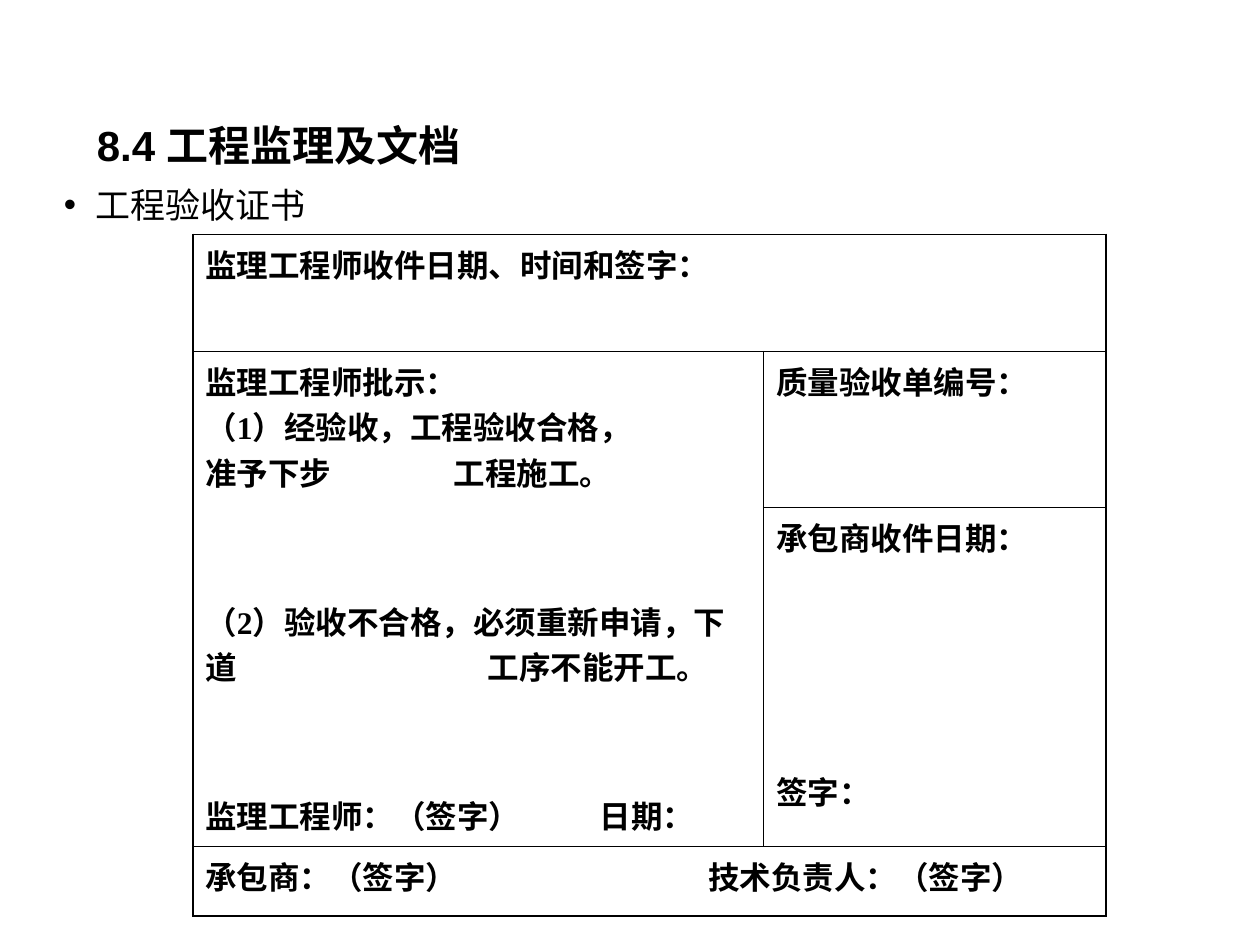
from lxml import etree
from pptx import Presentation, util as u
from pptx.dml.color import RGBColor
from pptx.enum import text
from pptx.oxml.ns import qn

# Content: a cell line is (text, space before in points, tab stop in inches)
HEADING = "8.4 工程监理及文档"
TOPIC = "工程验收证书"
COLUMNS = [4.53, 2.72]
ROWS = [0.93, 1.24, 2.69, 0.55]
CERTIFICATE = [  # row, column, last row, last column, lines
    (0, 0, 0, 1, [("监理工程师收件日期、时间和签字：", 0, None)]),
    (1, 0, 2, 0, [
        ("监理工程师批示：", 0, None),
        ("（1）经验收，工程验收合格，", 0, None),
        ("准予下步\t工程施工。", 0, 1.97),
        ("（2）验收不合格，必须重新申请，下道\t工序不能开工。", 59, 2.24),
        ("监理工程师：（签字）\t日期：", 59, 3.13),
    ]),
    (1, 1, 1, 1, [("质量验收单编号：", 0, None)]),
    (2, 1, 2, 1, [("承包商收件日期：", 0, None), ("签字：", 119, None)]),
    (3, 0, 3, 1, [("承包商：（签字）\t技术负责人：（签字）", 0, 3.99)]),
]
THEME = {
    "ink": "000000", "rule": 1, "east_asian": "Noto Sans CJK SC",
    "heading": {"font": "Arial", "size": 24, "bold": True},
    "topic": {"font": "Noto Sans CJK SC", "size": 20, "bold": False},
    "cell": {"font": "Times New Roman", "size": 18, "bold": True},
}


def write(paragraph, words, font, size, bold, before=0, tab=None, bullet=None):
    """Fill a paragraph; bullet is (character, left margin, indent)."""
    props = paragraph._p.get_or_add_pPr()
    if before:
        paragraph.space_before = u.Pt(before)
    if bullet:
        mark, margin, indent = bullet
        props.set("marL", str(u.Inches(margin)))
        props.set("indent", str(u.Inches(indent)))
        etree.SubElement(props, qn("a:buFont"), typeface="Arial")
        etree.SubElement(props, qn("a:buChar"), char=mark)
    if tab:
        stops = etree.SubElement(props, qn("a:tabLst"))
        etree.SubElement(stops, qn("a:tab"), pos=str(u.Inches(tab)), algn="l")
    run = paragraph.add_run()
    run.text = words
    run.font.size, run.font.bold, run.font.name = u.Pt(size), bold, font
    run.font.color.rgb = RGBColor.from_string(THEME["ink"])
    etree.SubElement(run._r.get_or_add_rPr(), qn("a:ea"), typeface=THEME["east_asian"])


def add_frame(slide, left, top, width, height, anchor):
    frame = slide.shapes.add_textbox(*map(u.Inches, (left, top, width, height))).text_frame
    frame.word_wrap = True
    frame.vertical_anchor = anchor
    return frame


def rule_cell(cell):
    """Clear the fill and draw all four borders."""
    cell.fill.background()
    props = cell._tc.get_or_add_tcPr()
    for position, side in enumerate(("lnL", "lnR", "lnT", "lnB")):
        line = etree.Element(qn("a:" + side), w=str(u.Pt(THEME["rule"])))
        fill = etree.SubElement(line, qn("a:solidFill"))
        etree.SubElement(fill, qn("a:srgbClr"), val=THEME["ink"])
        props.insert(position, line)


def add_certificate(slide, left, top):
    table = slide.shapes.add_table(
        len(ROWS), len(COLUMNS), u.Inches(left), u.Inches(top),
        u.Inches(sum(COLUMNS)), u.Inches(sum(ROWS))).table
    table.first_row = table.horz_banding = False
    for column, width in zip(table.columns, COLUMNS):
        column.width = u.Inches(width)
    for row, height in zip(table.rows, ROWS):
        row.height = u.Inches(height)
    for cell in table.iter_cells():
        rule_cell(cell)
    for row, col, last_row, last_col, lines in CERTIFICATE:
        cell = table.cell(row, col)
        if (row, col) != (last_row, last_col):
            cell.merge(table.cell(last_row, last_col))
        frame = cell.text_frame
        for number, (words, before, tab) in enumerate(lines):
            paragraph = frame.add_paragraph() if number else frame.paragraphs[0]
            write(paragraph, words, before=before, tab=tab, **THEME["cell"])


def main():
    deck = Presentation()
    deck.slide_width, deck.slide_height = u.Inches(10), u.Inches(7.5)
    slide = deck.slides.add_slide(deck.slide_layouts[6])

    # Heading and topic
    heading = add_frame(slide, 0.67, 0.91, 7.87, 0.47, text.MSO_ANCHOR.MIDDLE)
    write(heading.paragraphs[0], HEADING, **THEME["heading"])
    topic = add_frame(slide, -0.59, 1.47, 3.63, 0.33, text.MSO_ANCHOR.TOP)
    topic.paragraphs[0].line_spacing = 0.8
    write(topic.paragraphs[0], TOPIC, bullet=("•", 1.25, -0.25), **THEME["topic"])

    # Acceptance certificate
    add_certificate(slide, 1.53, 1.86)
    deck.save("out.pptx")


if __name__ == "__main__":
    main()
